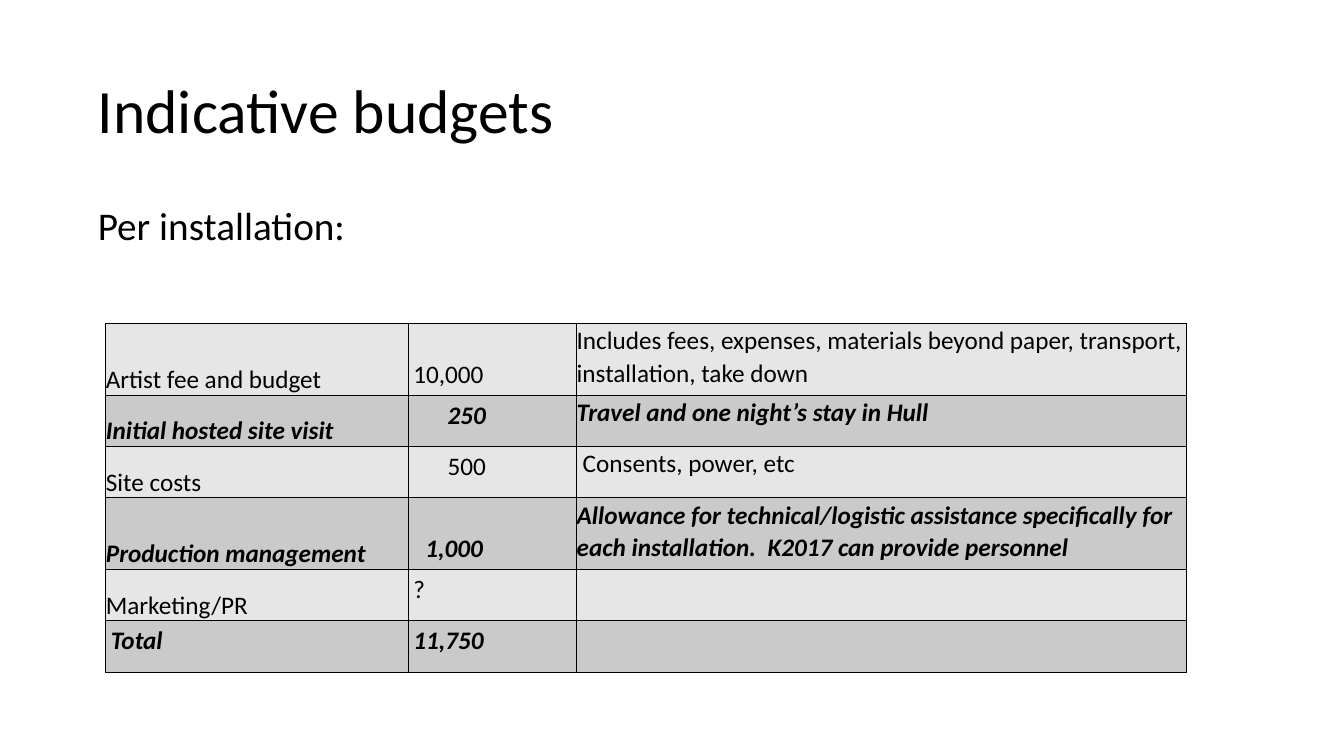
from dataclasses import dataclass
from typing import Any

import pptx
import pptx.dml.color
import pptx.enum.text
import pptx.oxml
import pptx.oxml.ns
import pptx.util
from pptx.util import Inches

ALIGN = pptx.enum.text.PP_ALIGN
ANCHOR = pptx.enum.text.MSO_ANCHOR


@dataclass(frozen=True)
class Theme:
    font: str = "Calibri"
    ink: str = "000000"
    bands: tuple[str, str] = ("E6E6E6", "CACACA")
    title: int = 44
    body: int = 28
    cell: int = 18
    border: float = 1


@dataclass(frozen=True)
class Entry:
    """Text of one table cell and how it sits there."""
    text: str = ""
    inset: float = 0.05
    anchor: Any = ANCHOR.TOP
    spacing: float = 1.0
    indent: float = 0


THEME = Theme()
COLUMNS = (3.0, 1.67, 6.05)
ROW_HEIGHTS = (0.71, 0.51, 0.51, 0.71, 0.51, 0.51)


def label(text: str) -> Entry:
    return Entry(text, inset=0, anchor=ANCHOR.BOTTOM, spacing=1.07)


def note(text: str, indent: float = 0) -> Entry:
    return Entry(text, inset=0, spacing=1.07, indent=indent)


BUDGET = (
    (label("Artist fee and budget"), Entry("10,000", anchor=ANCHOR.BOTTOM),
     note("Includes fees, expenses, materials beyond paper, transport, "
          "installation, take down")),
    (label("Initial hosted site visit"), Entry("250", indent=0.34),
     note("Travel and one night’s stay in Hull")),
    (label("Site costs"), Entry("500", indent=0.34),
     note("Consents, power, etc", indent=0.06)),
    (label("Production management"),
     Entry("1,000", anchor=ANCHOR.BOTTOM, indent=0.12),
     note("Allowance for technical/logistic assistance specifically for "
          "each installation.  K2017 can provide personnel")),
    (label("Marketing/PR"), Entry("?"), Entry()),
    (Entry("Total"), Entry("11,750"), Entry()),
)


def apply(target: Any, values: dict[str, Any]) -> None:
    for name, value in values.items():
        setattr(target, name, value)


def write(tf: Any, text: str, size: int, spacing: float,
          indent: float = 0, strong: bool = False) -> Any:
    """Fill the first paragraph and return it."""
    p = tf.paragraphs[0]
    apply(p, {"alignment": ALIGN.LEFT, "line_spacing": spacing})
    p_pr = p._p.get_or_add_pPr()
    p_pr.set("marL", str(Inches(indent)))
    p_pr.set("indent", "0")
    r = p.add_run()
    r.text = text
    apply(r.font, {"name": THEME.font, "size": pptx.util.Pt(size),
                   "bold": strong, "italic": strong})
    r.font.color.rgb = pptx.dml.color.RGBColor.from_string(THEME.ink)
    return p


def fill_placeholder(sp: Any, box: tuple[float, ...], text: str, size: int,
                     anchor: Any) -> Any:
    apply(sp, dict(zip(("left", "top", "width", "height"), map(Inches, box))))
    tf = sp.text_frame
    apply(tf, {"margin_left": Inches(0.05), "margin_right": Inches(0.05),
               "margin_top": Inches(0.05), "margin_bottom": Inches(0.05),
               "word_wrap": True, "vertical_anchor": anchor,
               "auto_size": pptx.enum.text.MSO_AUTO_SIZE.NONE})
    return write(tf, text, size, 0.9)


def add_borders(cell: Any) -> None:
    tc_pr = cell._tc.get_or_add_tcPr()
    for side in ("lnL", "lnR", "lnT", "lnB"):
        tc_pr.append(pptx.oxml.parse_xml(
            f'<a:{side} {pptx.oxml.ns.nsdecls("a")} '
            f'w="{pptx.util.Pt(THEME.border)}"><a:solidFill>'
            f'<a:srgbClr val="{THEME.ink}"/></a:solidFill></a:{side}>'))


def fill_cell(cell: Any, entry: Entry, band: int) -> None:
    inset = Inches(entry.inset)
    apply(cell, {"margin_left": inset, "margin_right": inset,
                 "margin_top": inset, "margin_bottom": inset,
                 "vertical_anchor": entry.anchor})
    add_borders(cell)
    cell.fill.solid()
    cell.fill.fore_color.rgb = pptx.dml.color.RGBColor.from_string(
        THEME.bands[band])
    if entry.text:
        write(cell.text_frame, entry.text, THEME.cell, entry.spacing,
              entry.indent, strong=band == 1)


def add_budget_table(s: Any) -> None:
    table = s.shapes.add_table(
        len(BUDGET), len(COLUMNS), Inches(1.05), Inches(3.21),
        Inches(sum(COLUMNS)), Inches(sum(ROW_HEIGHTS))).table
    apply(table, {"first_row": False, "horz_banding": False})
    for column, width in zip(table.columns, COLUMNS):
        column.width = Inches(width)
    for row, height in zip(table.rows, ROW_HEIGHTS):
        row.height = Inches(height)
    for i, entries in enumerate(BUDGET):
        for j, entry in enumerate(entries):
            fill_cell(table.cell(i, j), entry, i % 2)


def main() -> None:
    prs = pptx.Presentation()
    apply(prs, {"slide_width": Inches(13.33), "slide_height": Inches(7.5)})
    s = prs.slides.add_slide(prs.slide_layouts[1])

    # Title and lead-in
    fill_placeholder(s.shapes.title, (0.92, 0.4, 11.5, 1.45),
                     "Indicative budgets", THEME.title, ANCHOR.MIDDLE)
    p = fill_placeholder(s.placeholders[1], (0.92, 2, 11.5, 4.76),
                         "Per installation:", THEME.body, ANCHOR.TOP)
    p.space_before = pptx.util.Pt(10)
    p._p.get_or_add_pPr().append(pptx.oxml.parse_xml(
        f'<a:buNone {pptx.oxml.ns.nsdecls("a")}/>'))

    # Budget lines
    add_budget_table(s)
    prs.save("out.pptx")


if __name__ == "__main__":
    main()
